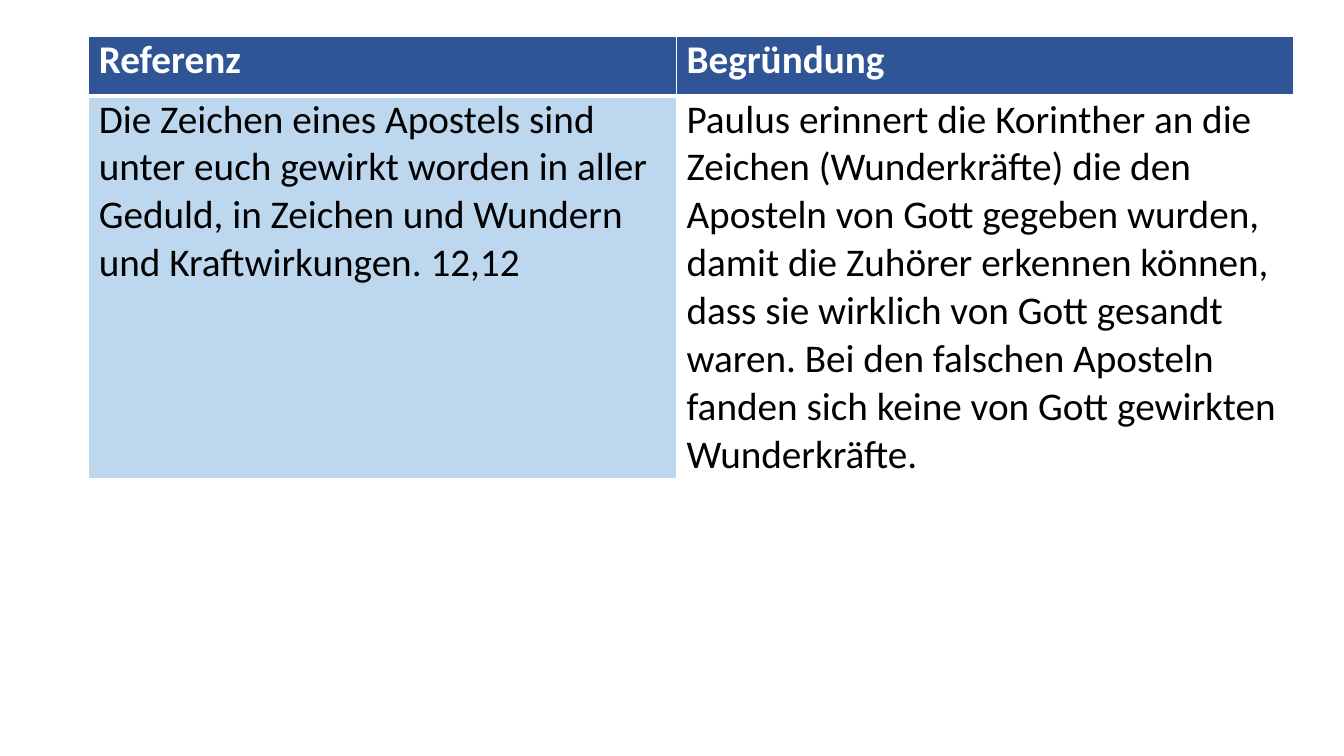
from pptx import Presentation
from pptx.dml.color import RGBColor
from pptx.oxml.ns import qn
from pptx.util import Inches, Pt
from lxml.etree import SubElement

COLORS = {"white": "FFFFFF", "black": "000000", "header": "2F5597", "reference": "BDD7EE"}
COLUMN_WIDTHS = [5.83, 6.12]
ROW_HEIGHTS = [0.59, 3.74]
HEADINGS = ["Referenz", "Begründung"]
PASSAGE = [
    "Die Zeichen eines Apostels sind unter euch gewirkt worden in aller Geduld, "
    "in Zeichen und Wundern und Kraftwirkungen. 12,12",
    "Paulus erinnert die Korinther an die Zeichen (Wunderkräfte) die den Aposteln "
    "von Gott gegeben wurden, damit die Zuhörer erkennen können, dass sie wirklich "
    "von Gott gesandt waren. Bei den falschen Aposteln fanden sich keine von Gott "
    "gewirkten Wunderkräfte.",
]


def write_text(frame, text, color="black", bold=False, size=28, font="Calibri"):
    span = frame.paragraphs[0].add_run()
    span.text = text
    span.font.name = font
    span.font.size = Pt(size)
    span.font.bold = bold
    span.font.color.rgb = RGBColor.from_string(COLORS[color])


def set_borders(cell, color="white", **widths):
    """Draw the cell's edges; widths in points are keyed L, R, T and B."""
    properties = cell._tc.get_or_add_tcPr()
    for side, width in widths.items():
        line = SubElement(properties, qn(f"a:ln{side}"), w=str(Pt(width)))
        fill = SubElement(line, qn("a:solidFill"))
        SubElement(fill, qn("a:srgbClr"), val=COLORS[color])


def format_cell(cell, fill, top, bottom):
    cell.margin_left = cell.margin_right = Inches(0.1)
    cell.margin_top = cell.margin_bottom = 0
    set_borders(cell, L=1, R=1, T=top, B=bottom)
    cell.fill.solid()
    cell.fill.fore_color.rgb = RGBColor.from_string(COLORS[fill])


def add_passage_table(page, left, top):
    box = page.shapes.add_table(
        len(ROW_HEIGHTS), len(COLUMN_WIDTHS), Inches(left), Inches(top),
        Inches(sum(COLUMN_WIDTHS)), Inches(sum(ROW_HEIGHTS)))
    table = box.table
    table.horz_banding = False
    for column, width in zip(table.columns, COLUMN_WIDTHS):
        column.width = Inches(width)
    for row, height in zip(table.rows, ROW_HEIGHTS):
        row.height = Inches(height)

    for cell, heading in zip(table.rows[0].cells, HEADINGS):
        format_cell(cell, "header", top=1, bottom=3)
        write_text(cell.text_frame, heading, color="white", bold=True)
    for cell, text, fill in zip(table.rows[1].cells, PASSAGE, ["reference", "white"]):
        format_cell(cell, fill, top=3, bottom=1)
        write_text(cell.text_frame, text)


def main():
    deck = Presentation()
    deck.slide_width, deck.slide_height = Inches(13.33), Inches(7.5)
    page = deck.slides.add_slide(deck.slide_layouts[6])
    add_passage_table(page, left=0.88, top=0.36)
    deck.save("out.pptx")


if __name__ == "__main__":
    main()
